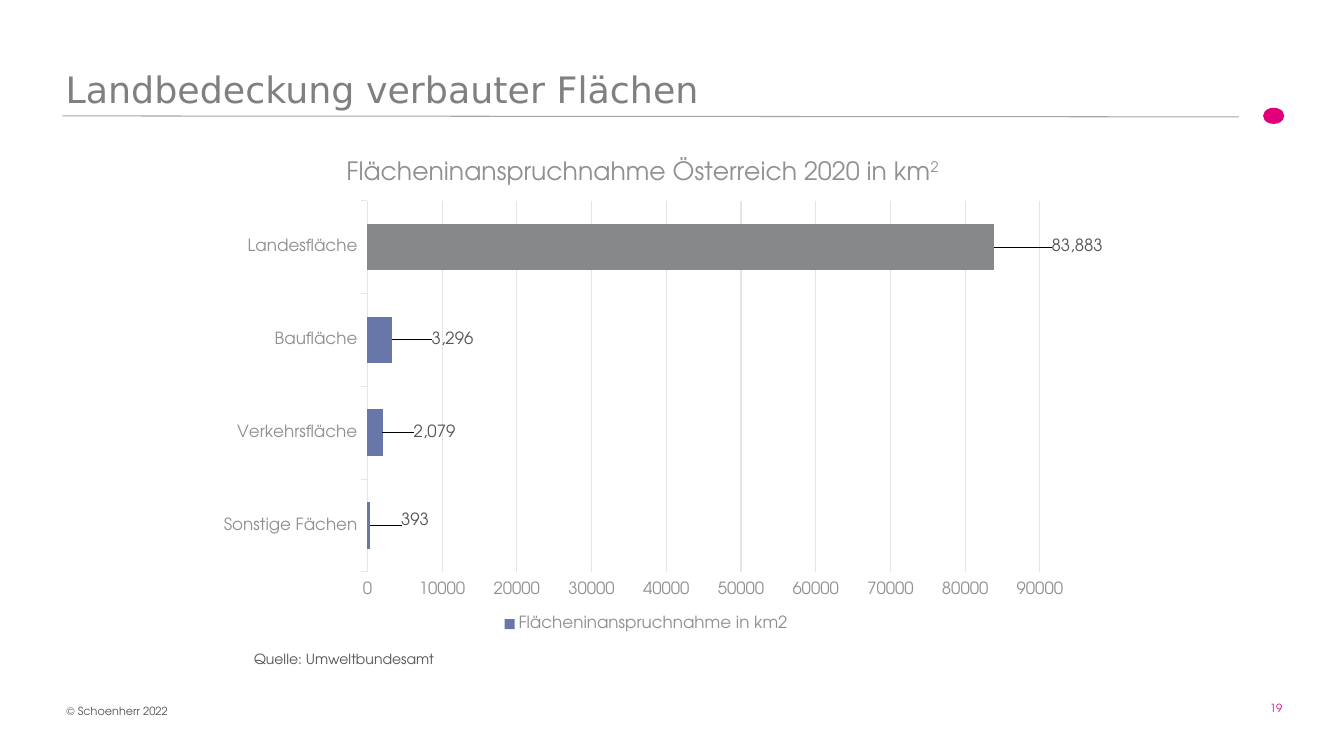
"""Build a slide with a bar chart of land use in Austria."""
from lxml import etree
from pptx import Presentation
from pptx import chart as ch
from pptx.chart.data import CategoryChartData
from pptx.dml.color import RGBColor
from pptx.enum import chart as ec, shapes, text
from pptx.oxml import parse_xml
from pptx.oxml.ns import nsdecls, qn
from pptx.util import Pt

FONT = "TeX Gyre Adventor"
PINK = RGBColor(0xE2, 0x00, 0x7A)
DARK = RGBColor(0x53, 0x54, 0x55)
SOFT = RGBColor(0x8F, 0x90, 0x91)
HEAD = RGBColor(0x80, 0x80, 0x80)
RULE = RGBColor(0xA6, 0xA6, 0xA6)
GRID = RGBColor(0xE5, 0xE5, 0xE6)
BLUE = RGBColor(0x69, 0x76, 0xAA)
GRAY = RGBColor(0x87, 0x88, 0x89)

AREAS = [
    ("Sonstige Fächen", 393, BLUE, (0.03, -0.01)),
    ("Verkehrsfläche", 2079, BLUE, (0.03, 0)),
    ("Baufläche", 3296, BLUE, (0.04, 0)),
    ("Landesfläche", 83883, GRAY, (0.06, 0)),
]


def style(font, size=12, color=SOFT, name=FONT):
    """Set size, colour and typeface of a font."""
    font.size, font.name, font.bold = Pt(size), name, False
    font.color.rgb = color


def write(para, words, raised=False, **form):
    """Add a formatted run to a paragraph."""
    run = para.add_run()
    run.text = words
    style(run.font, **form)
    if raised:
        run.font._element.set("baseline", "30000")


def label(slide, box, words, wrap=False, **form):
    """Add a text box with one line."""
    frame = slide.shapes.add_textbox(*map(Pt, box)).text_frame
    frame.word_wrap = wrap
    write(frame.paragraphs[0], words, **form)


def title(slide, words):
    """Place and fill the title."""
    shape = slide.shapes.title
    shape.left, shape.top, shape.width, shape.height = map(Pt, (39.6, 43.2, 850.3, 39.6))
    frame = shape.text_frame
    frame.vertical_anchor = text.MSO_ANCHOR.BOTTOM
    para = frame.paragraphs[0]
    para.alignment = text.PP_ALIGN.LEFT
    write(para, words, size=26, color=HEAD, name="DejaVu Sans")


def rule(slide):
    """Draw the line under the title and its dot."""
    line = slide.shapes.add_connector(
        shapes.MSO_CONNECTOR.STRAIGHT, *map(Pt, (44.6, 82.8, 884.9, 83.5)))
    line.line.color.rgb, line.line.width = RULE, Pt(0.75)
    etree.SubElement(line._element.spPr, qn("a:effectLst"))
    dot = slide.shapes.add_shape(
        shapes.MSO_SHAPE.OVAL, *map(Pt, (902.2, 77, 15.1, 11.5)))
    dot.shadow.inherit = False
    dot.fill.solid()
    dot.fill.fore_color.rgb = PINK
    dot.line.fill.background()


def layout(inner=False, **spots):
    """Return a manual chart layout."""
    modes = {key + "Mode": "edge" for key in "xy" if "w" in spots or key + "Edge" in spots}
    spots = {key.replace("Edge", ""): val for key, val in spots.items()}
    target = {"layoutTarget": "inner"} if inner else {}
    tags = "".join(f'<c:{key} val="{val}"/>' for key, val in {**target, **modes, **spots}.items())
    return parse_xml(f'<c:layout {nsdecls("c")}><c:manualLayout>{tags}</c:manualLayout></c:layout>')


def place(parent, after, **spots):
    """Put a manual layout after a child of a chart part."""
    for old in parent.findall(qn("c:layout")):
        parent.remove(old)
    new = layout(**spots)
    if after is None:
        parent.insert(0, new)
    else:
        parent.find(qn(after)).addnext(new)


def axes(chart):
    """Format both axes."""
    cat, val = chart.category_axis, chart.value_axis
    for axis in (cat, val):
        axis.major_tick_mark = ec.XL_TICK_MARK.OUTSIDE
        style(axis.tick_labels.font)
    cat.format.line.color.rgb, cat.format.line.width = GRID, Pt(0.75)
    val.format.line.fill.background()
    val.minimum_scale, val.maximum_scale, val.major_unit = 0, 90000, 10000
    val.tick_labels.number_format = "0"
    val.tick_labels.number_format_is_linked = False
    grid = val.major_gridlines.format.line
    grid.color.rgb, grid.width = GRID, Pt(0.75)


def bars(plot):
    """Colour the bars and shift their value labels."""
    plot.gap_width, plot.vary_by_categories = 100, False
    series = plot.series[0]
    series.format.fill.solid()
    series.format.fill.fore_color.rgb = BLUE
    marks = series.data_labels
    marks.show_value = True
    marks.number_format, marks.number_format_is_linked = "#,##0", False
    marks.position = ec.XL_LABEL_POSITION.OUTSIDE_END
    style(marks.font, color=DARK)
    for num, (_, _, color, (dx, dy)) in enumerate(AREAS):
        point = series.points[num]
        point.format.fill.solid()
        point.format.fill.fore_color.rgb = color
        style(point.data_label.font, color=DARK)
        point.data_label.position = ec.XL_LABEL_POSITION.OUTSIDE_END
        mark = marks._element.findall(qn("c:dLbl"))[num]
        place(mark, "c:idx", x=dx, y=dy)
        mark.find(qn("c:layout")).addnext(parse_xml(
            f'<c:numFmt {nsdecls("c")} formatCode="#,##0" sourceLinked="0"/>'))


def graph(slide):
    """Add the bar chart."""
    data = CategoryChartData(number_format="#,##0")
    data.categories = [area[0] for area in AREAS]
    data.add_series("Flächeninanspruchnahme in km2", [area[1] for area in AREAS])
    chart = slide.shapes.add_chart(
        ec.XL_CHART_TYPE.BAR_CLUSTERED, *map(Pt, (149.8, 100.8, 637.9, 355.7)), data).chart
    style(chart.font, size=10, color=DARK)
    para = chart.chart_title.text_frame.paragraphs[0]
    write(para, "Flächeninanspruchnahme Österreich 2020 in km", size=18)
    write(para, "2", raised=True, size=18)
    chart.chart_title.include_in_layout = False
    place(chart.chart_title._element, "c:tx", xEdge=0.15, yEdge=0.03)
    chart.has_legend = True
    chart.legend.position = ec.XL_LEGEND_POSITION.BOTTOM
    chart.legend.include_in_layout = False
    style(chart.legend.font)
    place(chart.legend._element, "c:legendPos", x=0.32, y=0.94, w=0.34, h=0.06)
    axes(chart)
    bars(chart.plots[0])
    area = chart._chartSpace.chart.plotArea
    place(area, None, inner=True, x=0.177, y=0.12, w=0.755, h=0.745)


def main():
    """Build and save the slide."""
    deck = Presentation()
    deck.slide_width, deck.slide_height = Pt(960), Pt(540)
    slide = deck.slides.add_slide(deck.slide_layouts[5])
    title(slide, "Landbedeckung verbauter Flächen")
    rule(slide)
    graph(slide)
    label(slide, (174.2, 460.8, 145.4, 19.4), "Quelle: Umweltbundesamt", size=10, color=DARK)
    label(slide, (40.3, 499.7, 211.7, 17.3), "© Schoenherr 2022", wrap=True, size=8, color=DARK)
    label(slide, (900, 497.5, 29.5, 17.3), "19", size=8, color=PINK)
    deck.save("out.pptx")


if __name__ == "__main__":
    main()
